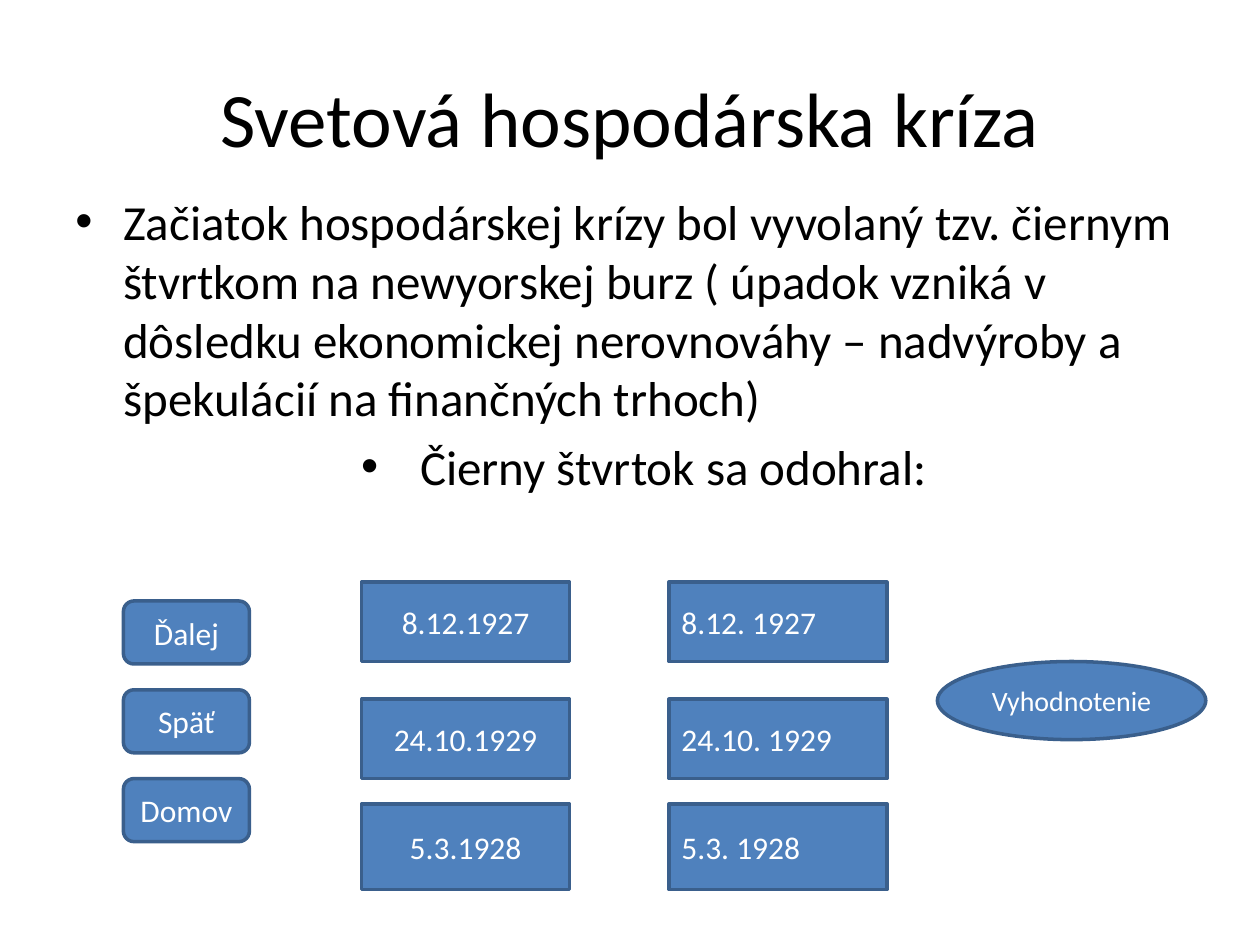
from lxml.etree import SubElement
from pptx import Presentation
from pptx.dml.color import RGBColor
from pptx.enum.shapes import MSO_SHAPE as Preset
from pptx.enum.text import MSO_ANCHOR as Anchor, PP_ALIGN as Align
from pptx.oxml.ns import qn
from pptx.util import Inches, Pt

COLORS = {"fill": "4F81BD", "line": "3A5F8C", "light": "FFFFFF", "dark": "000000"}


def style_text(paragraph, text, size, color, align):
    paragraph.text = text
    paragraph.alignment = align
    paragraph.font.size = Pt(size)
    paragraph.font.name = "Calibri"
    paragraph.font.color.rgb = RGBColor.from_string(COLORS[color])


def add_button(preset, box, text, size=18, align=Align.CENTER):
    shape = slide.shapes.add_shape(preset, *map(Inches, box))
    shape.shadow.inherit = False
    shape.fill.solid()
    shape.fill.fore_color.rgb = RGBColor.from_string(COLORS["fill"])
    shape.line.color.rgb = RGBColor.from_string(COLORS["line"])
    shape.line.width = Pt(2)
    shape.text_frame.vertical_anchor = Anchor.MIDDLE
    style_text(shape.text_frame.paragraphs[0], text, size, "light", align)


presentation = Presentation()
presentation.slide_width = Inches(10)
presentation.slide_height = Inches(7.5)
slide = presentation.slides.add_slide(presentation.slide_layouts[6])

# Navigation buttons
for row, label in enumerate(["Ďalej", "Späť", "Domov"]):
    add_button(Preset.ROUNDED_RECTANGLE, (0.98, 4.77 + row * 0.705, 1, 0.5), label)

# Title
title = slide.shapes.add_textbox(Inches(0.5), Inches(0.3), Inches(9), Inches(1.25))
title.text_frame.word_wrap = True
title.text_frame.vertical_anchor = Anchor.MIDDLE
style_text(title.text_frame.paragraphs[0], "Svetová hospodárska kríza", 44, "dark", Align.CENTER)

# Bulleted body
body = slide.shapes.add_textbox(Inches(0.5), Inches(1.47), Inches(9.22), Inches(5.59))
body.text_frame.word_wrap = True
body.text_frame.add_paragraph()
bullets = [
    ("Začiatok hospodárskej krízy bol vyvolaný tzv. čiernym štvrtkom na newyorskej burz "
     "( úpadok vzniká v dôsledku ekonomickej nerovnováhy – nadvýroby a špekulácií "
     "na finančných trhoch)", Align.LEFT),
    (" Čierny štvrtok sa odohral:", Align.CENTER),
]
for paragraph, (text, align) in zip(body.text_frame.paragraphs, bullets):
    style_text(paragraph, text, 28, "dark", align)
    paragraph.space_before = Pt(5.6)
    properties = paragraph._p.get_or_add_pPr()
    properties.set("marL", str(Inches(0.38)))
    properties.set("indent", str(-Inches(0.38)))
    bullet_font = SubElement(properties, qn("a:buFont"), typeface="Arial")
    bullet = SubElement(properties, qn("a:buChar"), char="•")
    # The bullet settings come before the default run properties
    properties.find(qn("a:defRPr")).addprevious(bullet_font)
    bullet_font.addnext(bullet)

# Date answers: centred column, then left-aligned column
rows = [(4.62, 0.63), (5.55, 0.63), (6.38, 0.68)]
columns = [
    (2.87, 1.65, Align.CENTER, ["8.12.1927", "24.10.1929", "5.3.1928"]),
    (5.31, 1.73, Align.LEFT, ["8.12. 1927", "24.10. 1929", "5.3. 1928"]),
]
for left, width, align, dates in columns:
    for (top, height), date in zip(rows, dates):
        add_button(Preset.RECTANGLE, (left, top, width, height), date, align=align)

# Evaluation button
add_button(Preset.OVAL, (7.44, 5.25, 2.13, 0.62), "Vyhodnotenie", size=16)

presentation.save("out.pptx")
